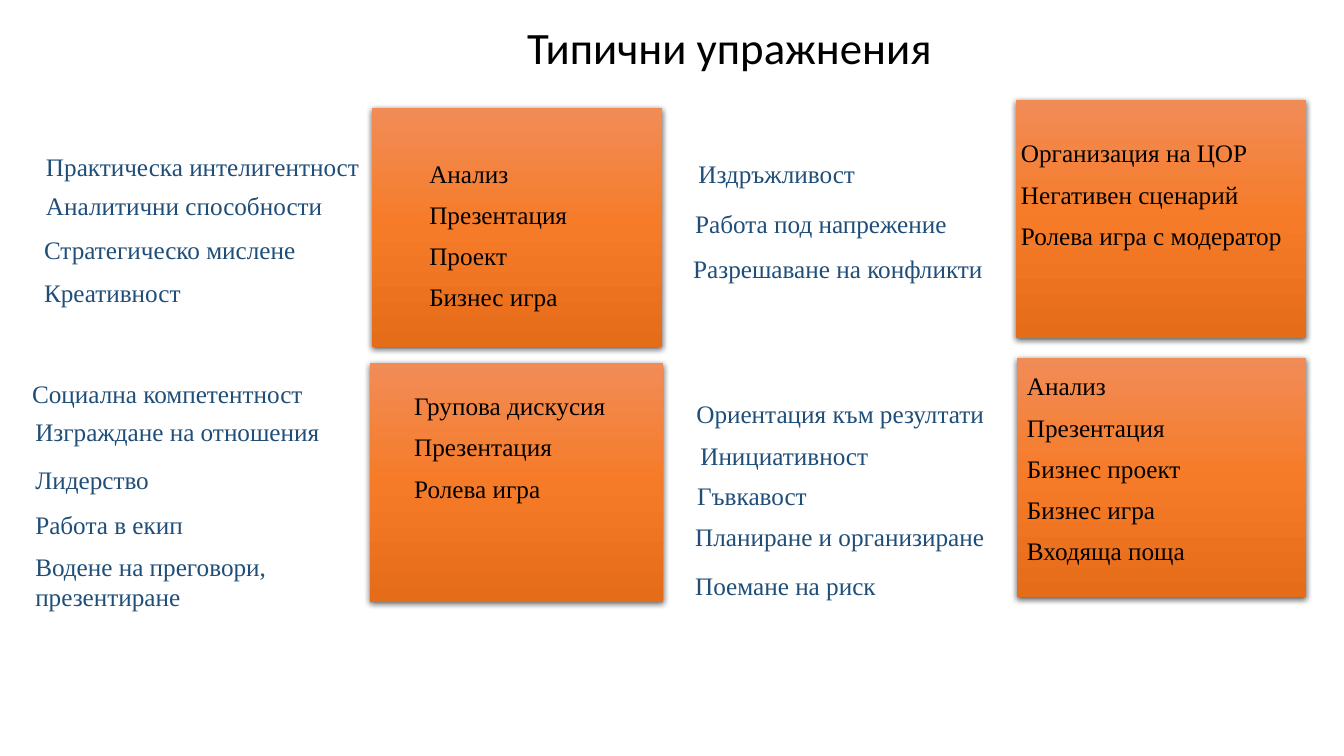
from dataclasses import dataclass
from typing import Any

import lxml.etree
import pptx
import pptx.dml.color
import pptx.enum.shapes
import pptx.enum.text
import pptx.oxml
import pptx.oxml.ns
import pptx.util

Cm = pptx.util.Cm
Pt = pptx.util.Pt
RGBColor = pptx.dml.color.RGBColor
AutoSize = pptx.enum.text.MSO_AUTO_SIZE

BLACK = RGBColor(0x00, 0x00, 0x00)
NAVY = RGBColor(0x1F, 0x4E, 0x79)
ORANGE_STOPS = {
    0: RGBColor(0xF1, 0x8C, 0x57),
    50: RGBColor(0xF6, 0x7B, 0x28),
    100: RGBColor(0xE5, 0x6C, 0x19),
}

TITLE_FONT = {"name": "Calibri", "size": Pt(32)}
BODY_FONT = {"name": "Times New Roman", "size": Pt(18)}
TIGHT = {"line_spacing": 0.9}
SPACED = {"line_spacing": 0.9, "space_before": Pt(10)}


@dataclass
class Area:
    """A rectangle on the page, in centimetres."""
    left: float
    top: float
    width: float
    height: float = 1.02

    def lengths(self) -> tuple[int, ...]:
        return tuple(Cm(n) for n in (self.left, self.top, self.width, self.height))


@dataclass
class Skill:
    text: str
    area: Area


@dataclass
class Quadrant:
    """Skills on the left, the exercises that test them on an orange panel."""
    panel: Area
    skills: list[Skill]
    exercise_area: Area
    exercises: list[str]


QUADRANTS = [
    Quadrant(
        Area(9.37, 2.72, 7.32, 6.02),
        [Skill("Практическа интелигентност", Area(0.91, 3.68, 8.46)),
         Skill("Аналитични способности", Area(0.91, 4.67, 8.46)),
         Skill("Стратегическо мислене", Area(0.86, 5.77, 8.46)),
         Skill("Креативност", Area(0.86, 6.86, 8.46))],
        Area(10.57, 3.94, 4.37, 4.47),
        ["Анализ", "Презентация", "Проект", "Бизнес игра"],
    ),
    Quadrant(
        Area(9.32, 9.14, 7.39, 6.02),
        [Skill("Социална компетентност", Area(0.56, 9.42, 8.43)),
         Skill("Изграждане на отношения", Area(0.64, 10.36, 8.46)),
         Skill("Лидерство", Area(0.64, 11.58, 7.42)),
         Skill("Работа в екип", Area(0.64, 12.7, 8.46)),
         Skill("Водене на преговори, презентиране", Area(0.64, 13.77, 8.46, 1.8))],
        Area(10.19, 9.8, 5.69, 4.47),
        ["Групова дискусия", "Презентация", "Ролева игра"],
    ),
    Quadrant(
        Area(25.6, 2.51, 7.32, 6.02),
        [Skill("Издръжливост", Area(17.35, 3.86, 7.82, 1.12)),
         Skill("Работа под напрежение", Area(17.27, 5.13, 7.85)),
         Skill("Разрешаване на конфликти", Area(17.22, 6.27, 7.82))],
        Area(25.48, 3.43, 8, 3.35),
        ["Организация на ЦОР", "Негативен сценарий", "Ролева игра с модератор"],
    ),
    Quadrant(
        Area(25.63, 9.02, 7.29, 6.02),
        [Skill("Ориентация към резултати", Area(17.3, 9.91, 8.81)),
         Skill("Инициативност", Area(17.4, 10.97, 8.48)),
         Skill("Гъвкавост", Area(17.32, 11.99, 7.85)),
         Skill("Планиране и организиране", Area(17.27, 13, 8.59)),
         Skill("Поемане на риск", Area(17.27, 14.25, 7.62))],
        Area(25.63, 9.3, 6.02, 6.12),
        ["Анализ", "Презентация", "Бизнес проект", "Бизнес игра", "Входяща поща"],
    ),
]


def set_attributes(target: Any, values: dict[str, Any]) -> None:
    for name, value in values.items():
        setattr(target, name, value)


def write_lines(box: Any, lines: list[str], font: dict[str, Any],
                color: RGBColor, spacing: dict[str, Any]) -> None:
    frame = box.text_frame
    frame.word_wrap = True
    for index, line in enumerate(lines):
        para = frame.add_paragraph() if index else frame.paragraphs[0]
        para.alignment = pptx.enum.text.PP_ALIGN.LEFT
        set_attributes(para, spacing)
        span = para.add_run()
        span.text = line
        set_attributes(span.font, font)
        span.font.color.rgb = color


def add_panel(page: Any, area: Area) -> None:
    """Draw an orange panel with a vertical gradient and a soft shadow below."""
    panel = page.shapes.add_shape(
        pptx.enum.shapes.MSO_SHAPE.RECTANGLE, *area.lengths())
    panel.line.fill.background()
    panel.shadow.inherit = False
    panel.fill.gradient()
    qn = pptx.oxml.ns.qn
    properties = panel.element.spPr
    gradient = properties.find(qn("a:gradFill"))
    stops = gradient.find(qn("a:gsLst"))
    for stop in list(stops):
        stops.remove(stop)
    for percent, color in ORANGE_STOPS.items():
        stop = lxml.etree.SubElement(stops, qn("a:gs"), pos=str(percent * 1000))
        lxml.etree.SubElement(stop, qn("a:srgbClr"), val=str(color))
    gradient.find(qn("a:lin")).set("ang", "5400000")
    shadow = lxml.etree.SubElement(
        properties.find(qn("a:effectLst")), qn("a:outerShdw"),
        blurRad=str(Pt(4.5)), dist=str(Pt(1.5)), dir="5400000",
        algn="ctr", rotWithShape="0")
    shade = lxml.etree.SubElement(shadow, qn("a:srgbClr"), val=str(BLACK))
    lxml.etree.SubElement(shade, qn("a:alpha"), val="63000")


def add_skills(page: Any, skills: list[Skill]) -> None:
    group = page.shapes.add_group_shape()
    for skill in skills:
        box = group.shapes.add_textbox(*skill.area.lengths())
        write_lines(box, [skill.text], BODY_FONT, NAVY, {})
        box.text_frame.auto_size = AutoSize.SHAPE_TO_FIT_TEXT


def add_quadrant(page: Any, quadrant: Quadrant) -> None:
    add_panel(page, quadrant.panel)
    add_skills(page, quadrant.skills)
    box = page.shapes.add_textbox(*quadrant.exercise_area.lengths())
    write_lines(box, quadrant.exercises, BODY_FONT, BLACK, SPACED)


def format_title(page: Any, text: str, area: Area) -> None:
    title = page.shapes.title
    set_attributes(title, dict(zip(("left", "top", "width", "height"), area.lengths())))
    set_attributes(title.text_frame, {
        "auto_size": AutoSize.NONE,
        "vertical_anchor": pptx.enum.text.MSO_ANCHOR.MIDDLE,
    })
    write_lines(title, [text], TITLE_FONT, BLACK, TIGHT)


def main() -> None:
    deck = pptx.Presentation()
    set_attributes(deck, {"slide_width": Cm(33.87), "slide_height": Cm(19.05)})
    page = deck.slides.add_slide(deck.slide_layouts.get_by_name("Title Only"))
    format_title(page, "Типични упражнения", Area(13.03, 0.3, 12.14, 1.91))
    for quadrant in QUADRANTS:
        add_quadrant(page, quadrant)
    deck.save("out.pptx")


if __name__ == "__main__":
    main()
